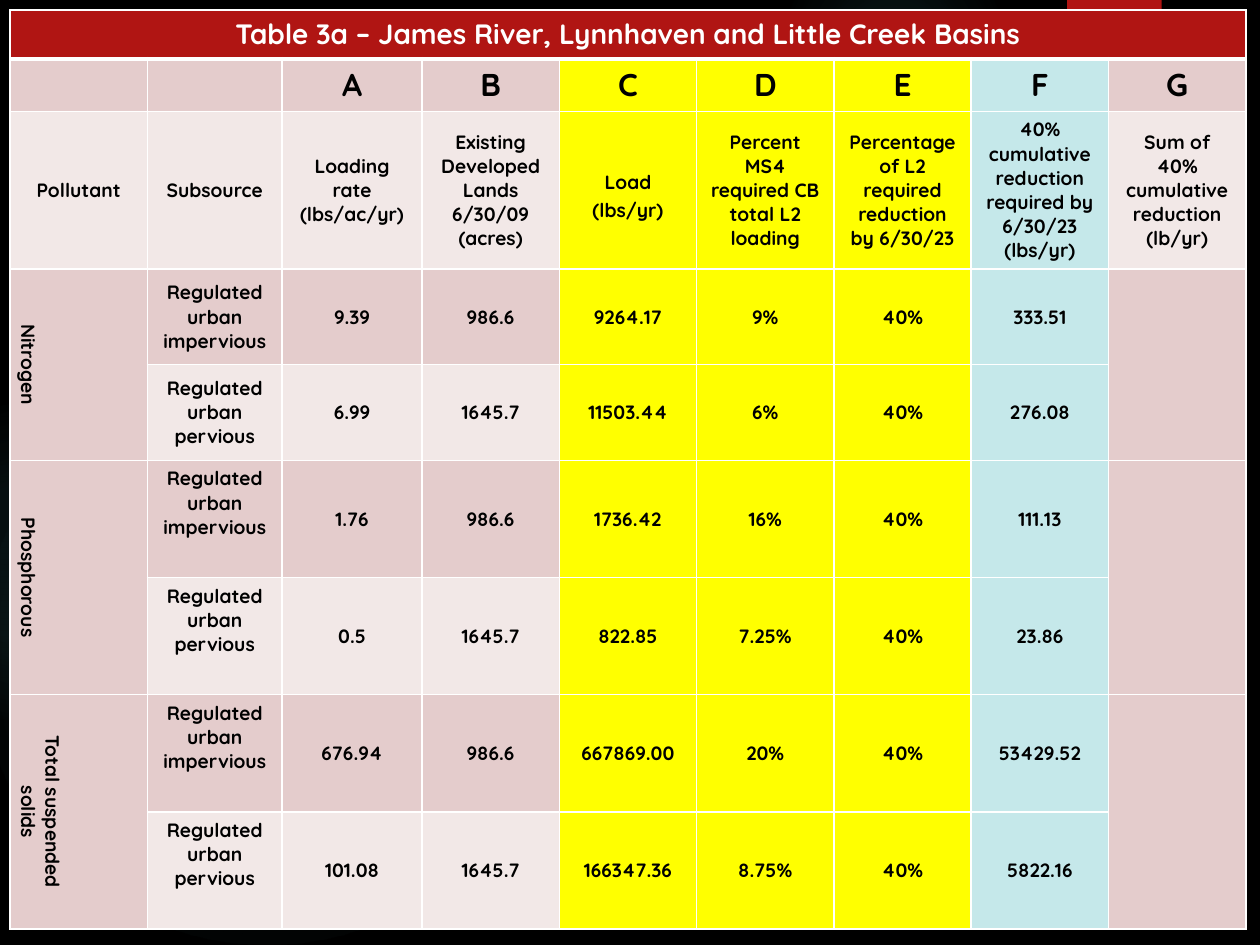
from dataclasses import dataclass

import pptx
import pptx.dml.color
import pptx.enum.shapes
import pptx.enum.text
import pptx.oxml
import pptx.oxml.ns
import pptx.util
from pptx.util import Inches


@dataclass(frozen=True)
class Theme:
    font: str = "Quicksand"
    background: str = "000000"
    accent: str = "B01513"
    glow: str = "50B9C1"
    light_text: str = "FFFFFF"
    dark_text: str = "000000"
    border: str = "FFFFFF"
    dark_band: str = "E4CCCC"
    light_band: str = "F2E8E7"
    load_column: str = "FFFF00"
    reduction_column: str = "C5E8EA"
    title_size: int = 16
    letter_size: int = 18
    body_size: int = 11


THEME = Theme()

TITLE = "Table 3a – James River, Lynnhaven and Little Creek Basins"
LETTERS = ["", "", *"ABCDEFG"]
HEADINGS = [
    "Pollutant",
    "Subsource",
    "Loading rate (lbs/ac/yr)",
    "Existing Developed Lands 6/30/09 (acres)",
    "Load",
    "Percent MS4 required CB total L2 loading",
    "Percentage of L2 required reduction by 6/30/23",
    "40% cumulative reduction required by 6/30/23 (lbs/yr)",
    "Sum of 40% cumulative reduction (lb/yr)",
]
# Per subsource: loading rate, load, MS4 percent of L2 loading, required reduction
POLLUTANTS = {
    "Nitrogen": [("9.39", "9264.17", "9%", "333.51"),
                 ("6.99", "11503.44", "6%", "276.08")],
    "Phosphorous": [("1.76", "1736.42", "16%", "111.13"),
                    ("0.5", "822.85", "7.25%", "23.86")],
    "Total suspended solids": [("676.94", "667869.00", "20%", "53429.52"),
                               ("101.08", "166347.36", "8.75%", "5822.16")],
}
SUBSOURCES = [("Regulated urban impervious", "986.6"),
              ("Regulated urban pervious", "1645.7")]
L2_REDUCTION = "40%"

COLUMN_WIDTHS = [1.09, 1.07, 1.11] + [1.09] * 6
ROW_HEIGHTS = [0.39, 0.39, 1.17] + [0.76] * 2 + [0.93] * 4
FIRST_DATA_ROW = 3
LOAD_COLUMN = 4

# Left, top, diameter, then (position, opacity) stops in percent
GLOWS = [
    (6.22, -0.5, 1.75, [(0, 14), (36, 7), (73, 0)]),
    (-0.17, 2.92, 4.58, [(0, 11), (36, 10), (75, 0)]),
    (-0.92, 3.17, 2.58, [(0, 8), (36, 8), (72, 0)]),
]


def rgb(color):
    return pptx.dml.color.RGBColor.from_string(color)


def add_plain_shape(slide, kind, left, top, width, height):
    shape = slide.shapes.add_shape(
        kind, Inches(left), Inches(top), Inches(width), Inches(height))
    shape.shadow.inherit = False
    shape.line.fill.background()
    return shape


def add_glow(slide, left, top, diameter, stops):
    """Add a circle that fades out from its centre."""
    shape = add_plain_shape(
        slide, pptx.enum.shapes.MSO_SHAPE.OVAL, left, top, diameter, diameter)
    shape.fill.gradient()
    stop_xml = "".join(
        f'<a:gs pos="{position * 1000}"><a:srgbClr val="{THEME.glow}">'
        f'<a:alpha val="{opacity * 1000}"/></a:srgbClr></a:gs>'
        for position, opacity in stops)
    gradient = pptx.oxml.parse_xml(
        f'<a:gradFill {pptx.oxml.ns.nsdecls("a")}><a:gsLst>{stop_xml}</a:gsLst>'
        '<a:path path="circle">'
        '<a:fillToRect l="50000" t="50000" r="50000" b="50000"/>'
        '</a:path></a:gradFill>')
    properties = shape.element.spPr
    properties.replace(
        properties.find(pptx.oxml.ns.qn("a:gradFill")), gradient)


def add_page_tab(slide):
    tab = add_plain_shape(
        slide, pptx.enum.shapes.MSO_SHAPE.RECTANGLE, 8.47, 0, 0.75, 1.2)
    tab.fill.solid()
    tab.fill.fore_color.rgb = rgb(THEME.accent)


def set_borders(cell, bottom_width=1):
    """Draw the cell borders; call before the cell is filled."""
    properties = cell._tc.get_or_add_tcPr()
    for side, width in (("L", 1), ("R", 1), ("T", 1), ("B", bottom_width)):
        properties.append(pptx.oxml.parse_xml(
            f'<a:ln{side} {pptx.oxml.ns.nsdecls("a")} w="{pptx.util.Pt(width)}">'
            f'<a:solidFill><a:srgbClr val="{THEME.border}"/></a:solidFill>'
            f'</a:ln{side}>'))


def fill_color(row, column):
    if row == 0:
        return THEME.accent
    if 4 <= column <= 6:
        return THEME.load_column
    if column == 7:
        return THEME.reduction_column
    return THEME.dark_band if row % 2 else THEME.light_band


def is_top_anchored(row, column):
    return row < 2 or (column == 1 and row >= FIRST_DATA_ROW + 2)


def format_cell(cell, row, column, text):
    set_borders(cell, bottom_width=3 if row == 0 else 1)
    cell.fill.solid()
    cell.fill.fore_color.rgb = rgb(fill_color(row, column))
    anchor = pptx.enum.text.MSO_ANCHOR
    cell.vertical_anchor = (
        anchor.TOP if is_top_anchored(row, column) else anchor.MIDDLE)
    cell.text = text
    paragraph = cell.text_frame.paragraphs[0]
    paragraph.alignment = pptx.enum.text.PP_ALIGN.CENTER
    sizes = {0: THEME.title_size, 1: THEME.letter_size}
    paragraph.font.size = pptx.util.Pt(sizes.get(row, THEME.body_size))
    paragraph.font.name = THEME.font
    paragraph.font.bold = True
    paragraph.font.color.rgb = rgb(
        THEME.light_text if row == 0 else THEME.dark_text)


def add_load_unit(cell):
    """Put the unit after the heading, behind a larger space."""
    paragraph = cell.text_frame.paragraphs[0]
    for text, size in ((" ", THEME.letter_size), ("(lbs/yr)", THEME.body_size)):
        run = paragraph.add_run()
        run.text = text
        run.font.size = pptx.util.Pt(size)


def table_rows():
    rows = [[TITLE] + [""] * 8, LETTERS, HEADINGS]
    for pollutant, measurements in POLLUTANTS.items():
        labels = [pollutant, ""]
        for label, (subsource, acres), values in zip(
                labels, SUBSOURCES, measurements):
            rate, load, percent, reduction = values
            rows.append([label, subsource, rate, acres, load, percent,
                         L2_REDUCTION, reduction, ""])
    return rows


def add_load_table(slide):
    table = slide.shapes.add_table(
        len(ROW_HEIGHTS), len(COLUMN_WIDTHS), Inches(0.08), Inches(0.08),
        Inches(sum(COLUMN_WIDTHS)), Inches(sum(ROW_HEIGHTS))).table
    for column, width in zip(table.columns, COLUMN_WIDTHS):
        column.width = Inches(width)
    for row, height in zip(table.rows, ROW_HEIGHTS):
        row.height = Inches(height)
    for row, texts in enumerate(table_rows()):
        for column, text in enumerate(texts):
            format_cell(table.cell(row, column), row, column, text)
    add_load_unit(table.cell(2, LOAD_COLUMN))

    last = len(COLUMN_WIDTHS) - 1
    table.cell(0, 0).merge(table.cell(0, last))
    for row in range(FIRST_DATA_ROW, len(ROW_HEIGHTS), 2):
        for column in (0, last):
            table.cell(row, column).merge(table.cell(row + 1, column))
        table.cell(row, 0)._tc.get_or_add_tcPr().set("vert", "vert")


def main():
    presentation = pptx.Presentation()
    presentation.slide_width = Inches(10)
    presentation.slide_height = Inches(7.5)
    slide = presentation.slides.add_slide(presentation.slide_layouts[6])
    slide.background.fill.solid()
    slide.background.fill.fore_color.rgb = rgb(THEME.background)
    for glow in GLOWS:
        add_glow(slide, *glow)
    add_page_tab(slide)
    add_load_table(slide)
    presentation.save("out.pptx")


if __name__ == "__main__":
    main()
